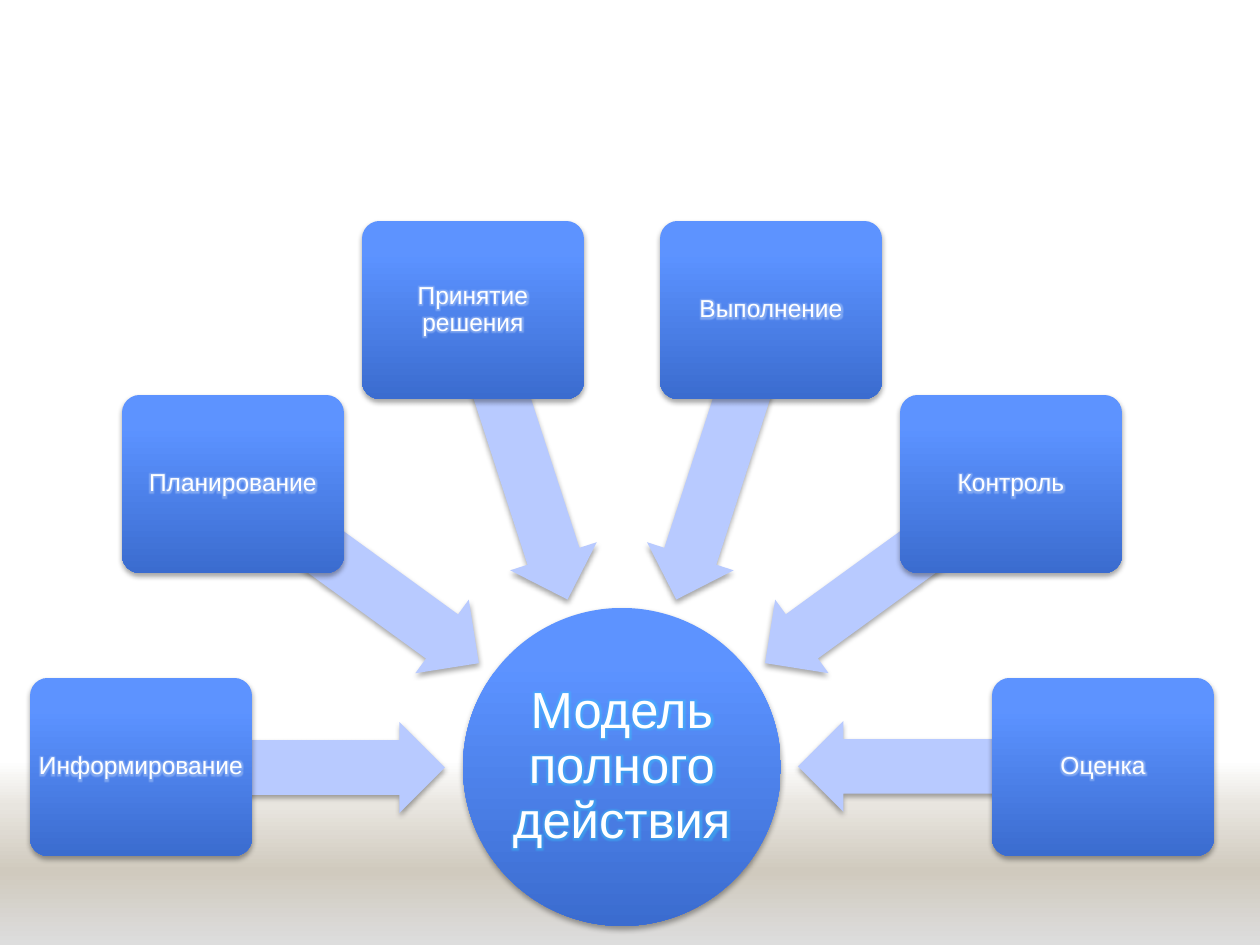
import math

import lxml.etree
import pptx
import pptx.dml.color
import pptx.enum.shapes
import pptx.enum.text
import pptx.oxml.ns
import pptx.util

SHAPES = pptx.enum.shapes.MSO_SHAPE
EMU_PER_PX = 914400 // 126
CENTER_X, CENTER_Y = 622, 767
BOX_RADIUS, ARROW_RADIUS = 481, 329
STEP_ANGLE = 36
STEPS = [
    "Информирование",
    "Планирование",
    "Принятие решения",
    "Выполнение",
    "Контроль",
    "Оценка",
]


def px(length):
    return pptx.util.Emu(length * EMU_PER_PX)


def color(hex_code):
    return pptx.dml.color.RGBColor.from_string(hex_code)


def add_node(parent, tag, **attributes):
    node = lxml.etree.SubElement(parent, pptx.oxml.ns.qn(tag))
    for name, value in attributes.items():
        node.set(name, str(value))
    return node


def add_color(parent, hex_code, alpha):
    node = add_node(parent, "a:srgbClr", val=hex_code)
    add_node(node, "a:alpha", val=alpha * 1000)


class SlideBuilder:
    font = "Arial"
    text_color = "FFFFFF"
    arrow_color = "B8CAFF"
    blue_stops = [(0, "5D93FF"), (20, "5B92FF"), (100, "3B6CCF")]
    floor_stops = [(0, "FFFFFF"), (25, "E8E5DF"), (60, "D0CABE"), (100, "DDDDDD")]

    def __init__(self, slide):
        self.slide = slide

    def shape(self, kind, center_x, center_y, width, height):
        shape = self.slide.shapes.add_shape(
            kind,
            px(round(center_x - width / 2)),
            px(round(center_y - height / 2)),
            px(width),
            px(height),
        )
        shape.line.fill.background()
        shape.shadow.inherit = False
        return shape

    def gradient(self, shape, stops):
        shape.fill.gradient()
        shape.fill.gradient_angle = 270
        stop_list = shape.element.spPr.find(".//" + pptx.oxml.ns.qn("a:gsLst"))
        for stop in list(stop_list):
            stop_list.remove(stop)
        for position, hex_code in stops:
            stop = add_node(stop_list, "a:gs", pos=position * 1000)
            add_color(stop, hex_code, 100)

    def shadow(self, shape):
        effects = shape.element.spPr.find(pptx.oxml.ns.qn("a:effectLst"))
        shadow = add_node(
            effects,
            "a:outerShdw",
            blurRad=pptx.util.Pt(3.1),
            dist=pptx.util.Pt(1.8),
            dir=5400000,
            rotWithShape=0,
        )
        add_color(shadow, "000000", 35)

    def text(self, shape, words, size, glow_color):
        frame = shape.text_frame
        frame.word_wrap = True
        frame.vertical_anchor = pptx.enum.text.MSO_ANCHOR.MIDDLE
        frame.margin_left = frame.margin_right = 0
        frame.margin_top = frame.margin_bottom = 0
        para = frame.paragraphs[0]
        para.alignment = pptx.enum.text.PP_ALIGN.CENTER
        para.line_spacing = 0.9
        para.font.name = self.font
        para.font.size = pptx.util.Pt(size)
        para.font.color.rgb = color(self.text_color)
        span = para.add_run()
        span.text = words
        effects = add_node(span.font._element, "a:effectLst")
        glow = add_node(effects, "a:glow", rad=pptx.util.Pt(5))
        add_color(glow, glow_color, 40)

    def floor(self):
        floor = self.shape(SHAPES.RECTANGLE, 630, 852, 1260, 185)
        self.gradient(floor, self.floor_stops)

    def hub(self, words):
        hub = self.shape(SHAPES.OVAL, CENTER_X, CENTER_Y, 318, 318)
        self.gradient(hub, self.blue_stops)
        self.shadow(hub)
        self.text(hub, words, 29, "33CCFF")

    def arrow(self, center_x, center_y, rotation):
        arrow = self.shape(SHAPES.LEFT_ARROW, center_x, center_y, 305, 91)
        arrow.adjustments[0] = 0.6
        arrow.adjustments[1] = 0.5
        arrow.rotation = rotation
        arrow.fill.solid()
        arrow.fill.fore_color.rgb = color(self.arrow_color)
        self.shadow(arrow)

    def box(self, center_x, center_y, words):
        box = self.shape(SHAPES.ROUNDED_RECTANGLE, center_x, center_y, 222, 178)
        box.adjustments[0] = 0.1
        self.gradient(box, self.blue_stops)
        self.shadow(box)
        self.text(box, words, 14, "CCE0FF")


def main():
    deck = pptx.Presentation()
    deck.slide_width = pptx.util.Inches(10)
    deck.slide_height = pptx.util.Inches(7.5)
    builder = SlideBuilder(deck.slides.add_slide(deck.slide_layouts[6]))
    builder.floor()
    builder.hub("Модель полного действия")
    for index, words in enumerate(STEPS):
        rotation = 180 + STEP_ANGLE * index
        across = math.cos(math.radians(rotation))
        down = math.sin(math.radians(rotation))
        builder.arrow(
            CENTER_X + ARROW_RADIUS * across,
            CENTER_Y + ARROW_RADIUS * down,
            rotation % 360,
        )
        builder.box(CENTER_X + BOX_RADIUS * across, CENTER_Y + BOX_RADIUS * down, words)
    deck.save("out.pptx")


if __name__ == "__main__":
    main()
